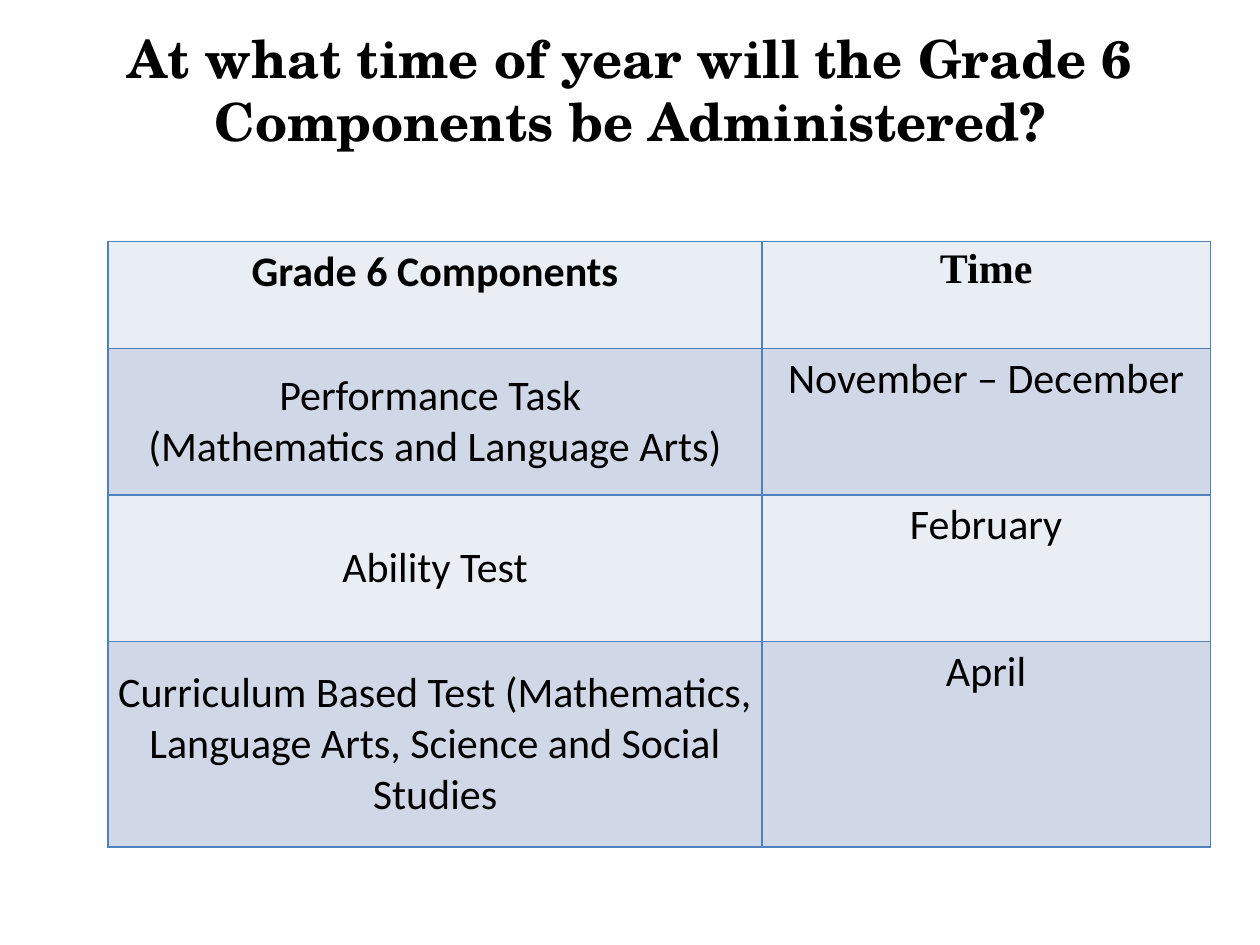
from dataclasses import dataclass

from lxml import etree
from pptx import Presentation
from pptx.dml.color import RGBColor
from pptx.enum.text import MSO_ANCHOR, PP_ALIGN
from pptx.oxml.ns import qn
from pptx.util import Cm, Pt

CENTER = PP_ALIGN.CENTER
TOP, MIDDLE = MSO_ANCHOR.TOP, MSO_ANCHOR.MIDDLE
TITLE_ONLY = 5


@dataclass(frozen=True)
class Theme:
    ink: str = "000000"
    border: str = "4F81BD"
    bands: tuple = ("E9EDF4", "D0D8E8")
    title_font: str = "TeX Gyre Schola"
    body_font: str = "Calibri"
    accent_font: str = "Times New Roman"
    title_size: int = 30
    body_size: int = 24
    border_width: int = 1


class SlideBuilder:
    def __init__(self, page, theme):
        self.page = page
        self.theme = theme

    def style(self, para, name, size, bold):
        para.alignment = CENTER
        para.font.name = name
        para.font.size = Pt(size)
        para.font.bold = bold
        para.font.color.rgb = RGBColor.from_string(self.theme.ink)

    def title(self, text, left, top, width, height):
        box = self.page.shapes.title
        box.left, box.top = Cm(left), Cm(top)
        box.width, box.height = Cm(width), Cm(height)
        frame = box.text_frame
        frame.text = text
        frame.word_wrap = True
        frame.vertical_anchor = MIDDLE
        self.style(frame.paragraphs[0], self.theme.title_font, self.theme.title_size, True)

    def table(self, rows, left, top, widths, heights):
        frame = self.page.shapes.add_table(
            len(rows), len(widths), Cm(left), Cm(top), Cm(sum(widths)), Cm(sum(heights)))
        table = frame.table
        for column, width in zip(table.columns, widths):
            column.width = Cm(width)
        for row, height in zip(table.rows, heights):
            row.height = Cm(height)
        for r, texts in enumerate(rows):
            for c, text in enumerate(texts):
                self.cell(table.cell(r, c), text, r, c)

    def cell(self, cell, text, row, column):
        theme = self.theme
        header = row == 0
        cell.text = text
        cell.margin_left = cell.margin_right = Cm(0.18)
        cell.margin_top = cell.margin_bottom = Cm(0.1)
        cell.vertical_anchor = MIDDLE if column == 0 and not header else TOP
        font = theme.accent_font if header and column == 1 else theme.body_font
        for para in cell.text_frame.paragraphs:
            self.style(para, font, theme.body_size, header)
        self.borders(cell)
        cell.fill.solid()
        cell.fill.fore_color.rgb = RGBColor.from_string(theme.bands[row % 2])

    def borders(self, cell):
        properties = cell._tc.get_or_add_tcPr()
        for side in ("lnL", "lnR", "lnT", "lnB"):
            line = etree.SubElement(
                properties, qn(f"a:{side}"), w=str(Pt(self.theme.border_width)))
            fill = etree.SubElement(line, qn("a:solidFill"))
            etree.SubElement(fill, qn("a:srgbClr"), val=self.theme.border)


def main():
    deck = Presentation()
    deck.slide_width, deck.slide_height = Cm(25.4), Cm(19.05)
    page = deck.slides.add_slide(deck.slide_layouts[TITLE_ONLY])
    builder = SlideBuilder(page, Theme())

    # Heading
    builder.title("At what time of year will the Grade 6 Components be Administered?",
                  0, 0.2, 25.4, 3.18)

    # Test schedule
    schedule = [
        ("Grade 6 Components", "Time"),
        ("Performance Task \n(Mathematics and Language Arts)", "November – December"),
        ("Ability Test", "February"),
        ("Curriculum Based Test (Mathematics, Language Arts, Science and Social Studies",
         "April"),
    ]
    builder.table(schedule, 2.18, 4.87, widths=(13.18, 9.04),
                  heights=(2.16, 2.95, 2.95, 4.14))

    deck.save("out.pptx")


if __name__ == "__main__":
    main()
